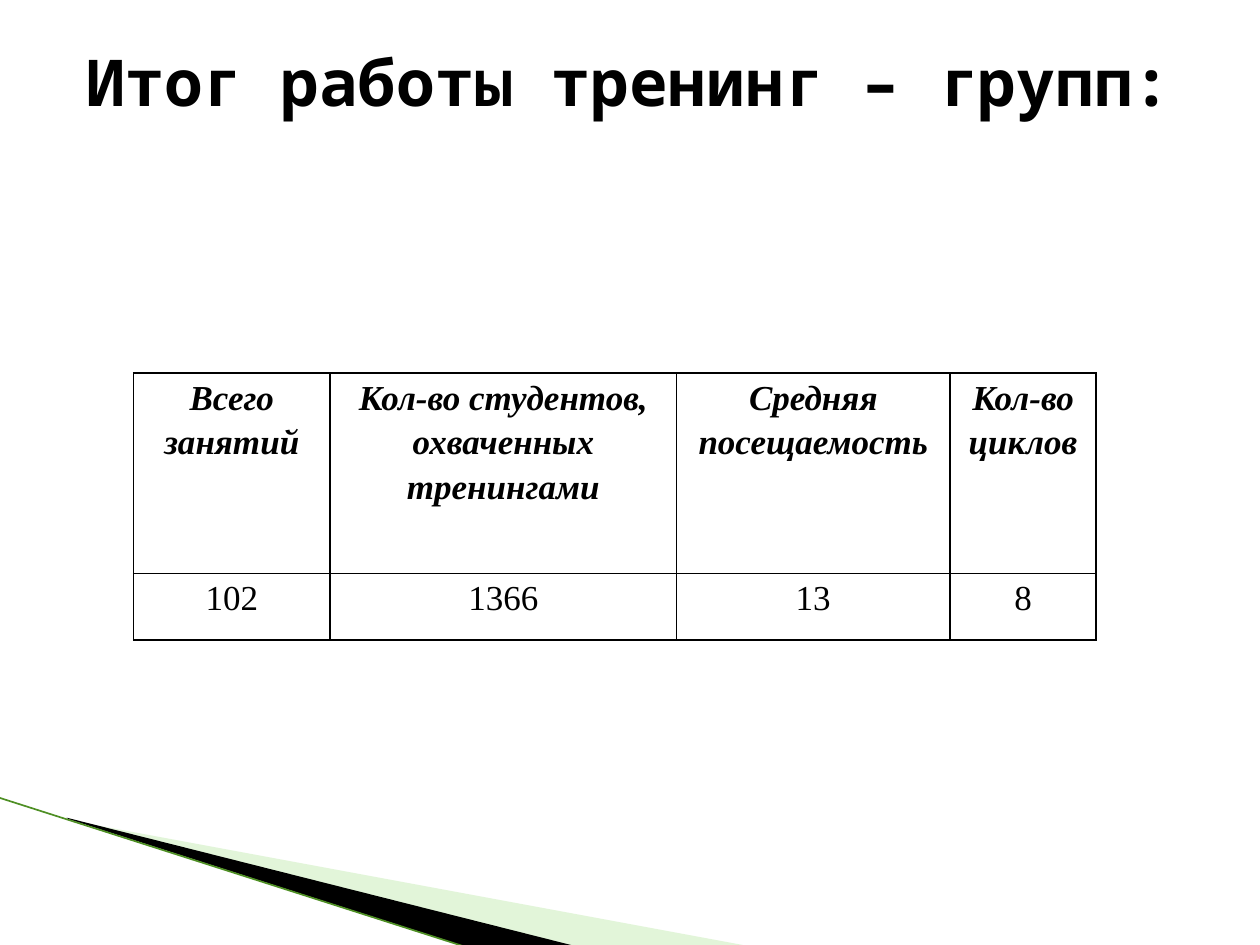
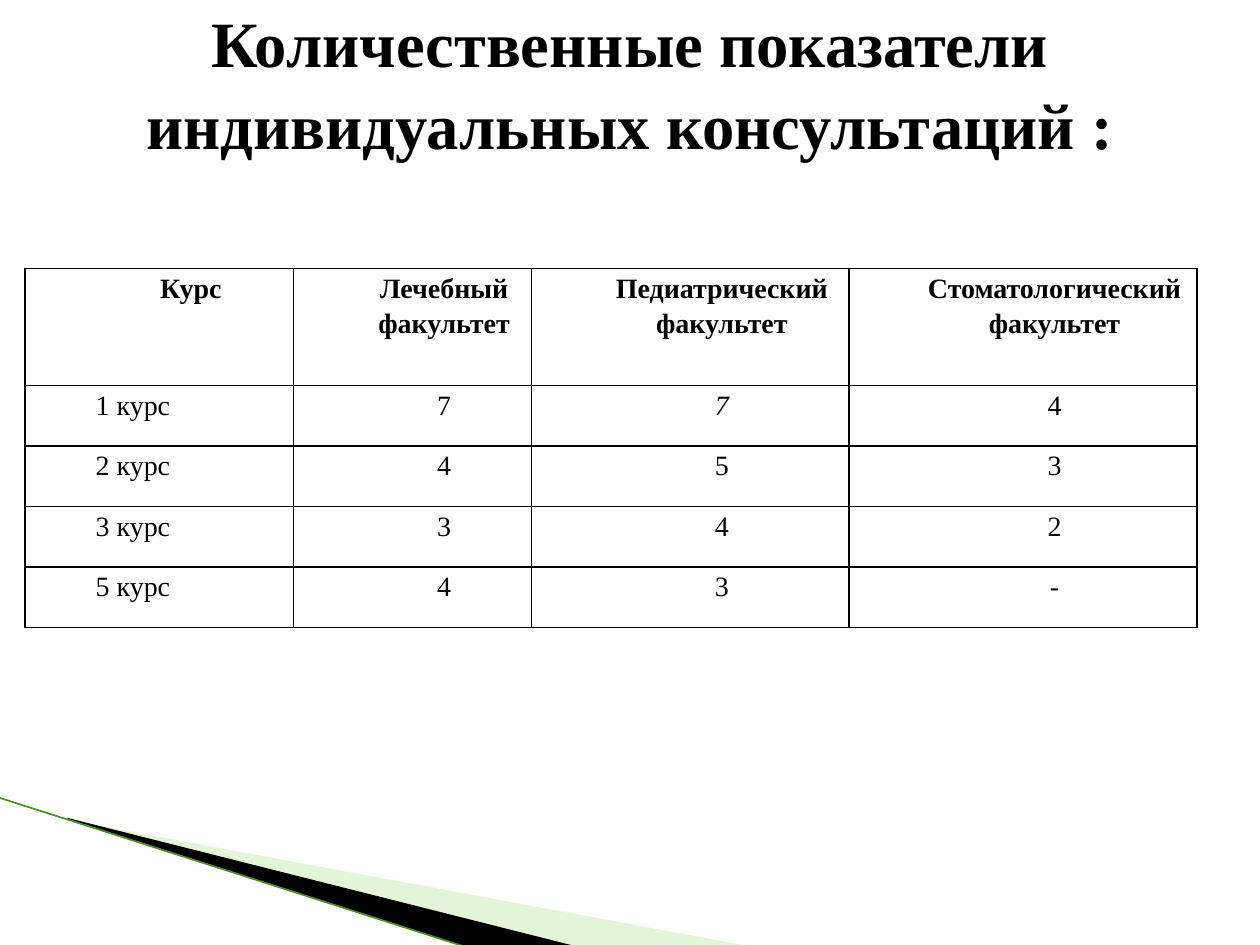
from dataclasses import dataclass

from lxml import etree
from pptx import Presentation
from pptx.dml.color import RGBColor
from pptx.enum.shapes import MSO_CONNECTOR
from pptx.enum.text import MSO_ANCHOR, MSO_AUTO_SIZE, PP_ALIGN
from pptx.oxml.ns import qn
from pptx.util import Inches, Pt

CENTER, LEFT = PP_ALIGN.CENTER, PP_ALIGN.LEFT
MIDDLE, NO_AUTOFIT = MSO_ANCHOR.MIDDLE, MSO_AUTO_SIZE.NONE
STRAIGHT = MSO_CONNECTOR.STRAIGHT
TITLE_ONLY = 5


@dataclass(frozen=True)
class Theme:
    ink: str = "000000"
    paper: str = "FFFFFF"
    pale_green: str = "B8E7A1"
    edge_green: str = "4E8F24"
    serif: str = "Times New Roman"
    mono: str = "Noto Sans Mono"
    title_size: float = 36.9
    summary_size: float = 20
    faculty_size: float = 16
    table_spacing: float = 1.15
    border_width: float = 1
    edge_width: float = 0.95


class Deck:
    def __init__(self, theme):
        self.theme = theme
        self.prs = Presentation()
        self.prs.slide_width, self.prs.slide_height = Inches(10), Inches(7.5)
        self.slide = None

    def new_slide(self, title, font, line_spacing=1.0):
        self.slide = self.prs.slides.add_slide(self.prs.slide_layouts[TITLE_ONLY])
        background = self.slide.background.fill
        background.solid()
        background.fore_color.rgb = RGBColor.from_string(self.theme.paper)
        self.corner()
        self.title(title, font, line_spacing)

    def corner(self):
        """Wedges and edge line in the lower left corner."""
        theme = self.theme
        self.wedge([(0.55, 6.51), (5.95, 7.51), (4.56, 7.51), (0.55, 6.5)],
                   theme.pale_green, opacity=40)
        self.wedge([(0.53, 6.49), (4.57, 7.51), (3.72, 7.52), (0.54, 6.5)],
                   theme.ink)
        self.line((-0.01, 6.33), (3.71, 7.52), theme.edge_green, theme.edge_width)

    def wedge(self, points, color, opacity=100):
        corners = [(Inches(x), Inches(y)) for x, y in points]
        builder = self.slide.shapes.build_freeform(*corners[0])
        builder.add_line_segments(corners[1:], close=True)
        wedge = builder.convert_to_shape()
        wedge.shadow.inherit = False
        wedge.fill.solid()
        wedge.fill.fore_color.rgb = RGBColor.from_string(color)
        wedge.line.fill.background()
        if opacity < 100:
            tint = wedge.fill._xPr.find(".//" + qn("a:srgbClr"))
            etree.SubElement(tint, qn("a:alpha"), val=str(opacity * 1000))

    def line(self, start, end, color, width):
        ends = [Inches(value) for value in (*start, *end)]
        edge = self.slide.shapes.add_connector(STRAIGHT, *ends)
        edge.line.color.rgb = RGBColor.from_string(color)
        edge.line.width = Pt(width)
        etree.SubElement(edge._element.spPr, qn("a:effectLst"))

    def title(self, text, font, line_spacing):
        title = self.slide.shapes.title
        title.left, title.top = Inches(0.5), Inches(0.3)
        title.width, title.height = Inches(9), Inches(1.25)
        frame = title.text_frame
        frame.text = text
        frame.word_wrap = True
        frame.auto_size = NO_AUTOFIT
        frame.vertical_anchor = MIDDLE
        frame.margin_bottom = Inches(0.62)
        paragraph = frame.paragraphs[0]
        paragraph.alignment = CENTER
        paragraph.line_spacing = line_spacing
        self.style(paragraph, font, self.theme.title_size, bold=True)

    def style(self, paragraph, font, size, bold=False, italic=False):
        for run in paragraph.runs:
            run.font.name, run.font.size = font, Pt(size)
            run.font.bold, run.font.italic = bold, italic
            run.font.color.rgb = RGBColor.from_string(self.theme.ink)

    def table(self, rows, left, top, widths, heights, size, margin, indent=0,
              italic_cells=(), left_column=False):
        """Ruled grid with a bold first row."""
        table = self.slide.shapes.add_table(
            len(rows), len(widths), Inches(left), Inches(top),
            Inches(sum(widths)), Inches(sum(heights))).table
        table.first_row = table.horz_banding = False
        for column, width in zip(table.columns, widths):
            column.width = Inches(width)
        for r, (values, height) in enumerate(zip(rows, heights)):
            table.rows[r].height = Inches(height)
            for c, value in enumerate(values):
                cell = table.cell(r, c)
                cell.text = value
                cell.margin_left = cell.margin_right = Inches(margin)
                cell.margin_top = cell.margin_bottom = 0
                self.rule(cell)
                cell.fill.background()
                paragraph = cell.text_frame.paragraphs[0]
                paragraph.alignment = LEFT if left_column and r and c == 0 else CENTER
                paragraph.line_spacing = self.theme.table_spacing
                if indent:
                    properties = paragraph._p.get_or_add_pPr()
                    properties.set("marL", str(Inches(indent)))
                    properties.set("indent", "0")
                self.style(paragraph, self.theme.serif, size, bold=r == 0,
                           italic=(r, c) in italic_cells)

    def rule(self, cell):
        properties = cell._tc.get_or_add_tcPr()
        for side in ("lnL", "lnR", "lnT", "lnB"):
            border = etree.SubElement(properties, qn(f"a:{side}"),
                                      w=str(Pt(self.theme.border_width)))
            fill = etree.SubElement(border, qn("a:solidFill"))
            etree.SubElement(fill, qn("a:srgbClr"), val=self.theme.ink)


def main():
    theme = Theme()
    deck = Deck(theme)

    # Training group results
    deck.new_slide("Итог работы тренинг – групп:", theme.mono)
    training_totals = [
        ["Всего занятий", "Кол-во студентов, охваченных тренингами",
         "Средняя посещаемость", "Кол-во циклов"],
        ["102", "1366", "13", "8"],
    ]
    deck.table(training_totals, 1.06, 2.96, [1.56, 2.75, 2.17, 1.16], [1.59, 0.53],
               theme.summary_size, margin=0.07,
               italic_cells=[(0, c) for c in range(4)])

    # Individual consultations by year and faculty
    deck.new_slide("Количественные показатели индивидуальных консультаций :",
                   theme.serif, line_spacing=1.05)
    consultations = [
        ["Курс", "Лечебный факультет", "Педиатрический факультет",
         "Стоматологический факультет"],
        ["1 курс", "7", "7", "4"],
        ["2 курс", "4", "5", "3"],
        ["3 курс", "3", "4", "2"],
        ["5 курс", "4", "3", "-"],
    ]
    deck.table(consultations, 0.2, 2.13, [2.13, 1.89, 2.52, 2.76],
               [0.93] + [0.48] * 4, theme.faculty_size, margin=0.06, indent=0.5,
               italic_cells=[(1, 2)], left_column=True)

    deck.prs.save("out.pptx")


if __name__ == "__main__":
    main()
